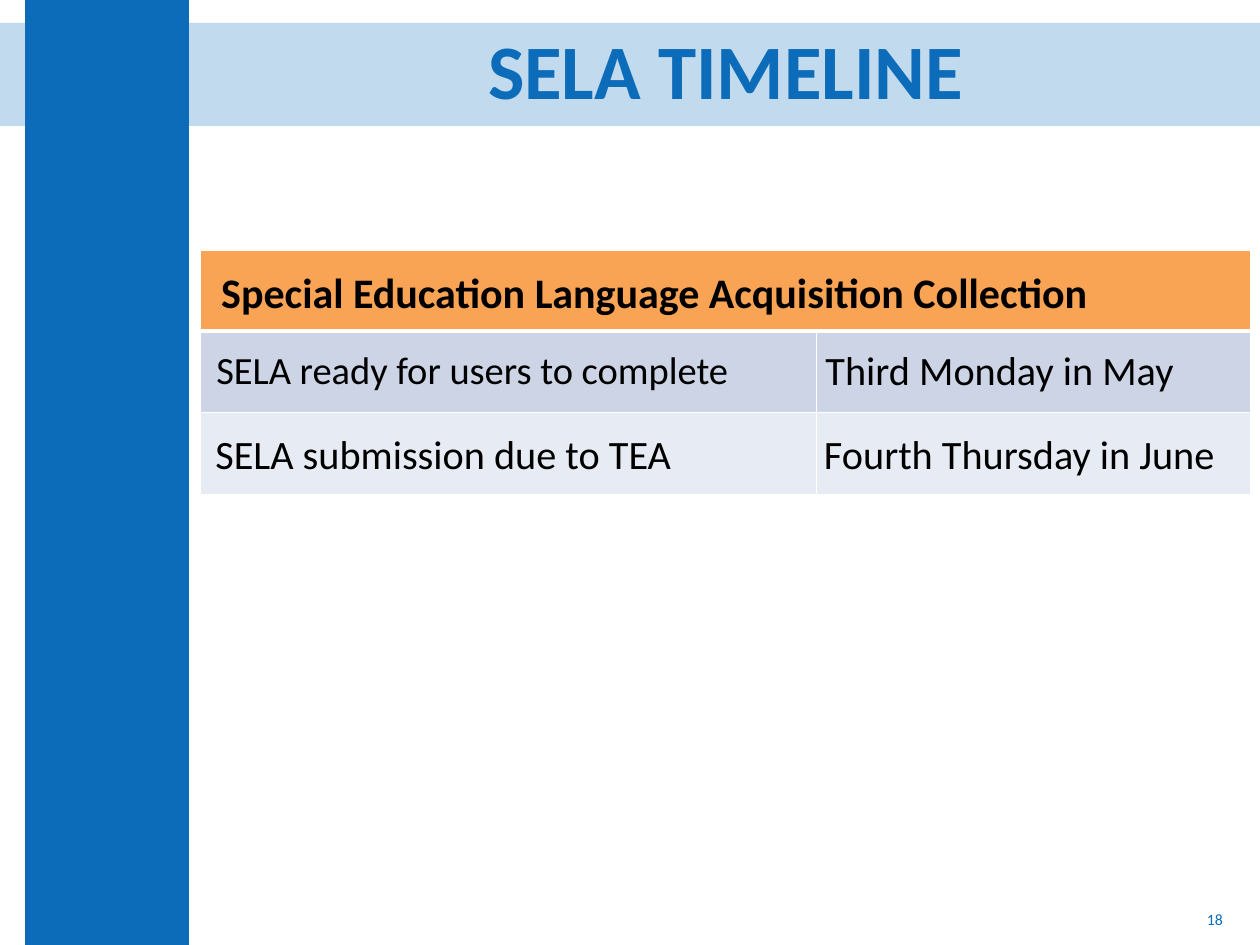
import pptx
import pptx.dml.color
import pptx.enum.shapes
import pptx.enum.text
import pptx.oxml.ns
import pptx.util
from lxml import etree
from pptx.util import Cm

COLORS = {
    "blue": "0D6CB9",
    "orange": "F9A354",
    "dark_row": "CCD4E6",
    "light_row": "E7EBF3",
    "black": "000000",
    "white": "FFFFFF",
}
ALIGN = pptx.enum.text.PP_ALIGN
MIDDLE = pptx.enum.text.MSO_ANCHOR.MIDDLE


def rgb(name):
    return pptx.dml.color.RGBColor.from_string(COLORS[name])


def add_child(parent, tag, **attributes):
    return etree.SubElement(parent, pptx.oxml.ns.qn(tag), **attributes)


def add_band(page, left, top, width, height, opacity=100):
    band = page.shapes.add_shape(
        pptx.enum.shapes.MSO_SHAPE.RECTANGLE, left, top, width, height)
    band.shadow.inherit = False
    band.line.fill.background()
    band.fill.solid()
    band.fill.fore_color.rgb = rgb("blue")
    if opacity < 100:
        color = band.fill._xPr.find(".//" + pptx.oxml.ns.qn("a:srgbClr"))
        add_child(color, "a:alpha", val=str(opacity * 1000))


def write_text(frame, text, size, color="black", bold=False,
               align=ALIGN.LEFT, spacing=None):
    paragraph = frame.paragraphs[0]
    paragraph.alignment = align
    if spacing:
        paragraph.line_spacing = spacing
    span = paragraph.add_run()
    span.text = text
    span.font.name = "Calibri"
    span.font.size = pptx.util.Pt(size)
    span.font.bold = bold
    span.font.color.rgb = rgb(color)


def add_text(page, left, top, width, height, text, **style):
    box = page.shapes.add_textbox(left, top, width, height)
    box.text_frame.word_wrap = True
    box.text_frame.vertical_anchor = MIDDLE
    write_text(box.text_frame, text, color="blue", **style)


def set_borders(cell, bottom):
    properties = cell._tc.get_or_add_tcPr()
    for side, width in (("L", 1), ("R", 1), ("T", 1), ("B", bottom)):
        line = add_child(properties, "a:ln" + side,
                         w=str(pptx.util.Pt(width)))
        fill = add_child(line, "a:solidFill")
        add_child(fill, "a:srgbClr", val=COLORS["white"])


def format_cell(cell, fill, indent, bottom=1):
    set_borders(cell, bottom)
    cell.fill.solid()
    cell.fill.fore_color.rgb = rgb(fill)
    cell.vertical_anchor = MIDDLE
    cell.margin_left = Cm(indent)
    cell.margin_right = cell.margin_top = cell.margin_bottom = 0


def add_timeline(page):
    table = page.shapes.add_table(
        3, 2, Cm(4.04), Cm(5.05), Cm(21.18), Cm(4.92)).table
    for column, width in zip(table.columns, (12.42, 8.76)):
        column.width = Cm(width)
    for row, height in zip(table.rows, (1.62, 1.65, 1.65)):
        row.height = Cm(height)

    header = table.cell(0, 0)
    header.merge(table.cell(0, 1))
    for column in range(2):
        format_cell(table.cell(0, column), "orange", 0.42, bottom=3)
    header.margin_top = Cm(0.15)
    write_text(header.text_frame,
               "Special Education Language Acquisition Collection",
               24, bold=True)

    steps = (
        ("dark_row", None, (("SELA ready for users to complete", 22, 0.32),
                            ("Third Monday in May", 23, 0.18))),
        ("light_row", 1.07, (("SELA submission due to TEA", 23, 0.3),
                             ("Fourth Thursday in June", 23, 0.15))),
    )
    for row, (fill, spacing, entries) in enumerate(steps, start=1):
        for column, (text, size, indent) in enumerate(entries):
            cell = table.cell(row, column)
            format_cell(cell, fill, indent)
            write_text(cell.text_frame, text, size, spacing=spacing)


def main():
    deck = pptx.Presentation()
    deck.slide_width, deck.slide_height = Cm(25.4), Cm(19.05)
    page = deck.slides.add_slide(deck.slide_layouts[6])
    add_band(page, 0, Cm(0.46), deck.slide_width, Cm(2.08), opacity=25)
    add_band(page, Cm(0.51), 0, Cm(3.3), deck.slide_height)
    add_text(page, Cm(19.18), Cm(18.03), Cm(5.72), Cm(1.02), "18",
             size=9, align=ALIGN.RIGHT)
    add_text(page, Cm(4.6), Cm(0.46), Cm(20.07), Cm(2.08), "SELA TIMELINE",
             size=44, bold=True, align=ALIGN.CENTER, spacing=0.9)
    add_timeline(page)
    deck.save("out.pptx")


if __name__ == "__main__":
    main()
